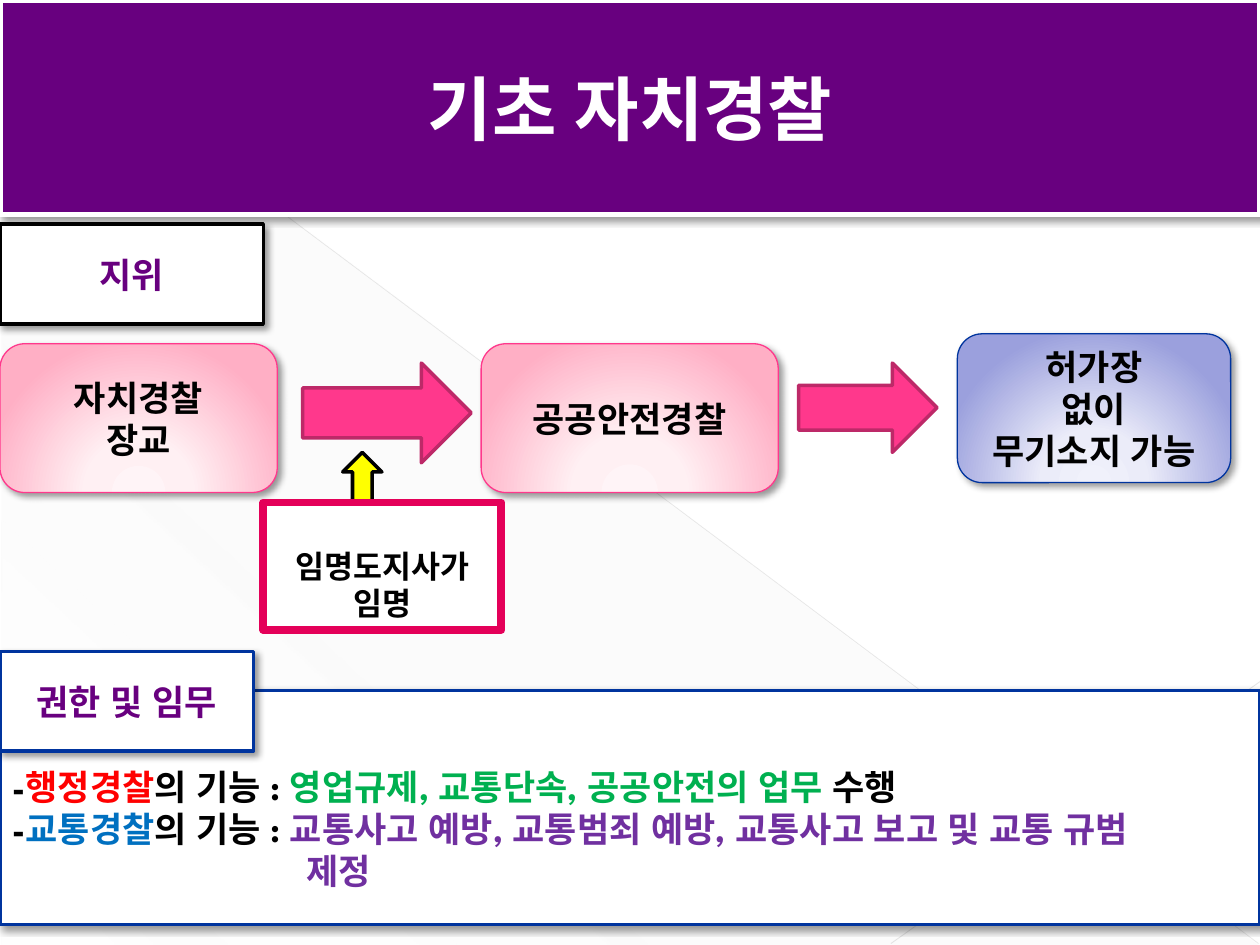
from dataclasses import dataclass
from typing import NamedTuple, Optional

from lxml import etree
from pptx import Presentation
from pptx import util as u
from pptx.dml.color import RGBColor
from pptx.enum import shapes, text
from pptx.oxml.ns import qn


class Stop(NamedTuple):
    percent: int
    color: str
    alpha: int = 100


@dataclass(frozen=True)
class Theme:
    font: str = "League Spartan"
    title_size: int = 40
    body_size: int = 20
    note_size: int = 18
    white: str = "FFFFFF"
    black: str = "000000"
    purple: str = "68007F"
    heading_edge: str = "4D005E"
    pink: str = "FF388C"
    pink_edge: str = "BD2968"
    crimson: str = "E40059"
    blue: str = "00349E"
    yellow: str = "FFFF00"
    red: str = "FF0000"
    green: str = "00B050"
    sky: str = "0070C0"
    violet: str = "7030A0"
    pink_glow: tuple = (Stop(0, "FFF4F7"), Stop(34, "FFF0F3"), Stop(100, "FFAFC5"))
    blue_glow: tuple = (Stop(0, "F0F1FB"), Stop(34, "EBECF9"), Stop(100, "9BA0DD"))
    heading_fill: tuple = (Stop(0, "34003F"), Stop(43, "68007F"),
                           Stop(48, "610076"), Stop(100, "34003F"))
    backdrop: tuple = (Stop(0, "D2D2D2", 10), Stop(70, "D2D2D2", 8), Stop(100, "D2D2D2", 1))


T = Theme()
KIND = shapes.MSO_SHAPE


class Area(NamedTuple):
    left: float
    top: float
    width: float
    height: float


class Words(NamedTuple):
    text: str
    color: str = T.black


class Status(NamedTuple):
    area: Area
    lines: tuple
    glow: tuple
    edge: str


class Block(NamedTuple):
    kind: int
    area: Area
    fill: str
    edge: str
    edge_width: float = 2
    shadow: bool = False


def child(parent, tag: str, **attributes):
    return etree.SubElement(parent, qn(tag), {k: str(v) for k, v in attributes.items()})


def add_color(parent, color: str, alpha: int = 100) -> None:
    node = child(parent, "a:srgbClr", val=color)
    if alpha < 100:
        child(node, "a:alpha", val=alpha * 1000)


def set_gradient(fill, owner, stops: tuple, angle: Optional[int] = None) -> None:
    """Linear at the given angle, or a glow from below without one."""
    fill.gradient()
    gradient = owner.find(qn("a:gradFill"))
    for old in list(gradient):
        gradient.remove(old)
    stop_list = child(gradient, "a:gsLst")
    for stop in stops:
        add_color(child(stop_list, "a:gs", pos=stop.percent * 1000), stop.color, stop.alpha)
    if angle is not None:
        child(gradient, "a:lin", ang=angle * 60000, scaled=0)
    else:
        glow = child(gradient, "a:path", path="circle")
        child(glow, "a:fillToRect", l=50000, t=155000, r=50000, b=-55000)


def set_look(shape, fill, edge: Optional[str], width: float = 2, shadow: bool = False) -> None:
    if isinstance(fill, str):
        shape.fill.solid()
        shape.fill.fore_color.rgb = RGBColor.from_string(fill)
    else:
        set_gradient(shape.fill, shape._element.spPr, fill)
    if edge:
        shape.line.color.rgb = RGBColor.from_string(edge)
        shape.line.width = u.Pt(width)
    else:
        shape.line.fill.background()
    shape.shadow.inherit = False
    if shadow:
        effects = shape._element.spPr.find(qn("a:effectLst"))
        outer = child(effects, "a:outerShdw", blurRad=u.Pt(4), dist=u.Pt(3),
                      dir=45 * 60000, algn="tl", rotWithShape=0)
        add_color(outer, T.black, 40)


def add_block(slide, block: Block):
    shape = slide.shapes.add_shape(block.kind, *map(u.Cm, block.area))
    set_look(shape, block.fill, block.edge, block.edge_width, block.shadow)
    return shape


def write(shape, paragraphs: list, size: int = T.body_size,
          align=text.PP_ALIGN.CENTER, anchor=text.MSO_ANCHOR.MIDDLE) -> None:
    frame = shape.text_frame
    frame.word_wrap = True
    frame.vertical_anchor = anchor
    for number, runs in enumerate(paragraphs):
        paragraph = frame.add_paragraph() if number else frame.paragraphs[0]
        paragraph.alignment = align
        for words in runs:
            run = paragraph.add_run()
            run.text = words.text
            font = run.font
            font.size, font.bold, font.name = u.Pt(size), True, T.font
            font.color.rgb = RGBColor.from_string(words.color)
            child(run._r.get_or_add_rPr(), "a:ea", typeface=T.font)


def add_heading(slide, area: Area, label: str, edge: str) -> None:
    box = add_block(slide, Block(KIND.RECTANGLE, area, T.white, edge, shadow=True))
    write(box, [[Words(label, T.purple)]])
    run = box.text_frame.paragraphs[0].runs[0]
    properties = run._r.get_or_add_rPr()
    set_gradient(run.font.fill, properties, T.heading_fill, 90)
    outline = etree.Element(qn("a:ln"), {"w": str(u.Pt(0.71))})
    add_color(child(outline, "a:solidFill"), T.heading_edge)
    properties.insert(0, outline)


def add_backdrop_line(slide, start: tuple, end: tuple, color: str, width: float, alpha: int) -> None:
    line = slide.shapes.add_connector(shapes.MSO_CONNECTOR.STRAIGHT, *map(u.Cm, start + end))
    line.line.color.rgb = RGBColor.from_string(color)
    line.line.width = u.Pt(width)
    properties = line._element.spPr
    child(next(properties.iter(qn("a:srgbClr"))), "a:alpha", val=alpha * 1000)
    child(properties, "a:effectLst")


def main() -> None:
    deck = Presentation()
    deck.slide_width, deck.slide_height = u.Cm(25.4), u.Cm(19.05)
    slide = deck.slides.add_slide(deck.slide_layouts[5])

    # Backdrop
    wedge = slide.shapes.add_shape(KIND.RIGHT_TRIANGLE, *map(u.Cm, (0.03, 0.05, 25.35, 19)))
    set_look(wedge, T.white, None)
    set_gradient(wedge.fill, wedge._element.spPr, T.backdrop, 133)
    add_backdrop_line(slide, (0, 0.03), (25.37, 19.02), "BFBFBF", 0.39, 35)
    add_backdrop_line(slide, (25.4, 13.74), (17.96, 19.02), "C6C6C6", 0.47, 45)

    # Title banner, in front of the backdrop
    title = slide.shapes.title
    slide.shapes._spTree.append(title._element)
    title.left, title.top, title.width, title.height = map(u.Cm, (0, 0, 25.4, 4.32))
    child(child(title._element.spPr, "a:prstGeom", prst="chevron"), "a:avLst")
    set_look(title, T.purple, T.white, 3, shadow=True)
    write(title, [[Words("기초 자치경찰", T.white)]], T.title_size)

    # Status chain
    for status in (
        Status(Area(0, 6.93, 5.59, 3), ("자치경찰", "장교"), T.pink_glow, T.pink),
        Status(Area(9.7, 6.93, 5.99, 3), ("공공안전경찰",), T.pink_glow, T.pink),
        Status(Area(19.3, 6.73, 5.51, 3), ("허가장", "없이", "무기소지 가능"), T.blue_glow, T.blue),
    ):
        box = add_block(slide, Block(KIND.ROUNDED_RECTANGLE, status.area, status.glow,
                                     status.edge, 0.75, True))
        write(box, [[Words(line)] for line in status.lines])
    for arrow in (
        Block(KIND.RIGHT_ARROW, Area(6.1, 7.32, 3.4, 2.01), T.pink, T.pink_edge),
        Block(KIND.RIGHT_ARROW, Area(16.1, 7.32, 2.79, 1.8), T.pink, T.pink_edge),
        Block(KIND.UP_ARROW, Area(6.91, 9.12, 0.79, 1.8), T.yellow, T.black),
    ):
        add_block(slide, arrow)

    # Appointment note
    appointment = add_block(slide, Block(KIND.RECTANGLE, Area(5.31, 10.13, 4.8, 2.57),
                                         T.white, T.crimson, 4.5))
    appointment.text_frame.margin_top = u.Cm(0.89)
    write(appointment, [[Words("임명도지사가 임명")]], T.note_size, anchor=text.MSO_ANCHOR.TOP)

    # Duties, with the section headings
    add_heading(slide, Area(0, 4.52, 5.31, 2.01), "지위", T.black)
    duties = add_block(slide, Block(KIND.RECTANGLE, Area(0, 13.92, 25.4, 4.72),
                                    T.white, T.blue, shadow=True))
    duties.text_frame.margin_top = u.Cm(0.97)
    write(duties, [
        [Words("-"), Words("행정경찰", T.red), Words("의 기능 : "),
         Words("영업규제, 교통단속, 공공안전의 업무 ", T.green), Words("수행")],
        [Words("-"), Words("교통경찰", T.sky), Words("의 기능 : "),
         Words("교통사고 예방, 교통범죄 예방, 교통사고 보고 및 교통 규범", T.violet)],
        [Words("제정", T.violet)],
    ], align=text.PP_ALIGN.LEFT)
    duties.text_frame.paragraphs[-1]._p.get_or_add_pPr().set("marL", str(u.Cm(5.92)))
    add_heading(slide, Area(0, 13.13, 5.11, 2.01), "권한 및 임무", T.blue)

    deck.save("out.pptx")


if __name__ == "__main__":
    main()
